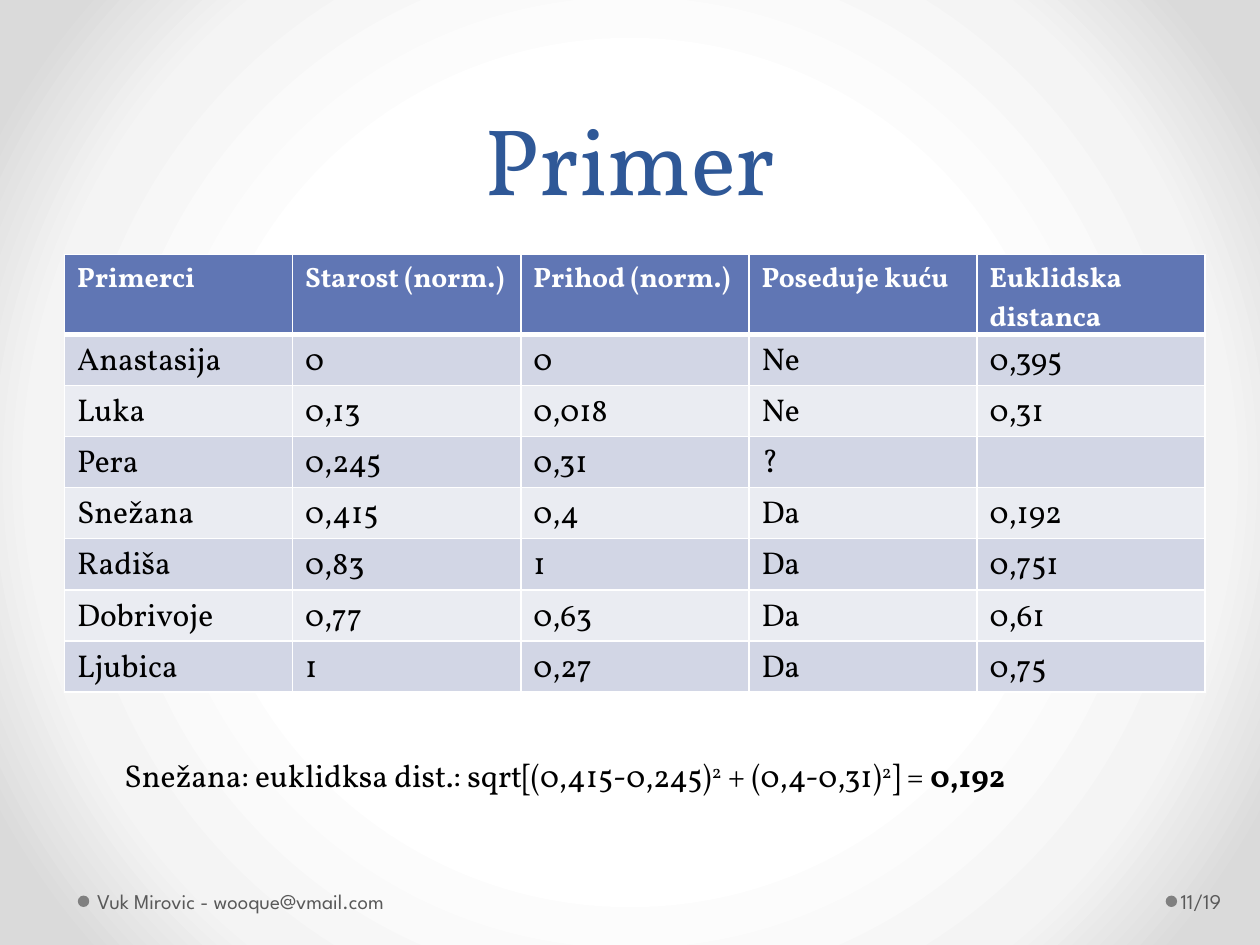
from typing import NamedTuple

from lxml import etree
from pptx import Presentation
from pptx.dml.color import RGBColor
from pptx.enum.shapes import MSO_SHAPE
from pptx.enum.text import MSO_ANCHOR, PP_ALIGN
from pptx.oxml.ns import qn
from pptx.util import Cm, Pt

OVAL = MSO_SHAPE.OVAL
TOP, MIDDLE, BOTTOM = MSO_ANCHOR.TOP, MSO_ANCHOR.MIDDLE, MSO_ANCHOR.BOTTOM
LEFT, CENTER = PP_ALIGN.LEFT, PP_ALIGN.CENTER

SERIF, SANS = "Vollkorn", "League Spartan"
WHITE, BLACK, GREY, DOT_GREY = "FFFFFF", "000000", "595959", "808080"
TITLE_BLUE, HEADER_BLUE = "2F5897", "6076B4"
BANDS = ("D2D6E5", "EAECF2")
BACKDROP = ((50, "FFFFFF"), (76, "F4F4F4"), (92, "DADADA"))

COLUMN_WIDTH, HEADER_HEIGHT, ROW_HEIGHT = 4.6, 1.59, 1.03
DOT_SIZE = 0.23

HEADINGS = ("Primerci", "Starost (norm.)", "Prihod (norm.)",
            "Poseduje kuću", "Euklidska distanca")
EXAMPLES = (
    ("Anastasija", "0", "0", "Ne", "0,395"),
    ("Luka", "0,13", "0,018", "Ne", "0,31"),
    ("Pera", "0,245", "0,31", "?", ""),
    ("Snežana", "0,415", "0,4", "Da", "0,192"),
    ("Radiša", "0,83", "1", "Da", "0,751"),
    ("Dobrivoje", "0,77", "0,63", "Da", "0,61"),
    ("Ljubica", "1", "0,27", "Da", "0,75"),
)


class Box(NamedTuple):
    left: float
    top: float
    width: float
    height: float


class Insets(NamedTuple):
    left: float = 0.25
    top: float = 0.13
    right: float = 0.25
    bottom: float = 0.13


class Piece(NamedTuple):
    text: str
    bold: bool = False
    raised: bool = False


class FooterItem(NamedTuple):
    text: str
    box: Box
    insets: Insets
    dot_left: float


FOOTER = (
    FooterItem("Vuk Mirovic - wooque@vmail.com", Box(1.83, 17.65, 7.9, 1.02),
               Insets(left=0.13), 1.57),
    FooterItem("11/19", Box(23.72, 17.65, 1.55, 1.02),
               Insets(left=0.08, right=0.13), 23.5),
)
CALCULATION = (
    Piece("Snežana: euklidksa dist.: sqrt[(0,415-0,245)"),
    Piece("2", raised=True),
    Piece(" + (0,4-0,31)"),
    Piece("2", raised=True),
    Piece("] = "),
    Piece("0,192", bold=True),
)


def rgb(value: str) -> RGBColor:
    return RGBColor.from_string(value)


def write(frame, pieces, *, size, color, font=SERIF, align=LEFT, leading=None):
    paragraph = frame.paragraphs[0]
    paragraph.alignment = align
    if leading:
        paragraph.line_spacing = Pt(leading)
    for piece in pieces:
        run = paragraph.add_run()
        run.text = piece.text
        run.font.name = font
        run.font.size = Pt(size)
        run.font.bold = piece.bold
        run.font.color.rgb = rgb(color)
        if piece.raised:
            run._r.get_or_add_rPr().set("baseline", "30000")


def add_text(slide, box: Box, pieces, *, anchor=TOP, insets=Insets(), **style):
    frame = slide.shapes.add_textbox(*map(Cm, box)).text_frame
    frame.word_wrap = True
    frame.vertical_anchor = anchor
    frame.margin_left, frame.margin_top, frame.margin_right, frame.margin_bottom = map(Cm, insets)
    write(frame, pieces, **style)


def add_color_xml(parent, value: str) -> None:
    etree.SubElement(parent, qn("a:srgbClr"), val=value)


def paint_backdrop(slide) -> None:
    slide.background.fill.gradient()
    gradient = slide.element.find(".//" + qn("a:gradFill"))
    gradient.clear()
    stops = etree.SubElement(gradient, qn("a:gsLst"))
    for position, value in BACKDROP:
        add_color_xml(etree.SubElement(stops, qn("a:gs"), pos=str(position * 1000)), value)
    circle = etree.SubElement(gradient, qn("a:path"), path="circle")
    etree.SubElement(circle, qn("a:fillToRect"), l="50000", t="50000", r="50000", b="50000")


def add_footer(slide, item: FooterItem) -> None:
    middle = item.box.top + item.box.height / 2
    dot_box = Box(item.dot_left, middle - DOT_SIZE / 2 + 0.01, DOT_SIZE, DOT_SIZE)
    dot = slide.shapes.add_shape(OVAL, *map(Cm, dot_box))
    dot.shadow.inherit = False
    dot.fill.solid()
    dot.fill.fore_color.rgb = rgb(DOT_GREY)
    dot.line.fill.background()
    add_text(slide, item.box, [Piece(item.text)], anchor=MIDDLE, insets=item.insets,
             size=12, color=GREY, font=SANS)


def fill_cell(cell, text: str, *, fill: str, bottom_width=1, bold=False, **style) -> None:
    properties = cell._tc.get_or_add_tcPr()
    for side, width in (("L", 1), ("R", 1), ("T", 1), ("B", bottom_width)):
        border = etree.SubElement(properties, qn(f"a:ln{side}"), w=str(Pt(width)))
        add_color_xml(etree.SubElement(border, qn("a:solidFill")), WHITE)
    cell.fill.solid()
    cell.fill.fore_color.rgb = rgb(fill)
    if text:
        write(cell.text_frame, [Piece(text, bold)], **style)


def add_examples(slide) -> None:
    box = Box(1.3, 5.13, COLUMN_WIDTH * len(HEADINGS),
              HEADER_HEIGHT + ROW_HEIGHT * len(EXAMPLES))
    table = slide.shapes.add_table(len(EXAMPLES) + 1, len(HEADINGS), *map(Cm, box)).table
    for column in table.columns:
        column.width = Cm(COLUMN_WIDTH)
    for index, row in enumerate(table.rows):
        row.height = Cm(ROW_HEIGHT if index else HEADER_HEIGHT)
    for column, heading in enumerate(HEADINGS):
        fill_cell(table.cell(0, column), heading, fill=HEADER_BLUE, bottom_width=3,
                  bold=True, size=16, color=WHITE)
    for index, example in enumerate(EXAMPLES):
        for column, value in enumerate(example):
            fill_cell(table.cell(index + 1, column), value, fill=BANDS[index % 2],
                      size=18, color=BLACK)


def main() -> None:
    deck = Presentation()
    deck.slide_width, deck.slide_height = Cm(25.4), Cm(19.05)
    slide = deck.slides.add_slide(deck.slide_layouts[6])
    paint_backdrop(slide)
    add_text(slide, Box(1.27, 0, 22.86, 4.45), [Piece("Primer")], anchor=BOTTOM,
             size=54, color=TITLE_BLUE, align=CENTER, leading=58)
    for item in FOOTER:
        add_footer(slide, item)
    add_text(slide, Box(2.26, 15.11, 18.82, 1.02), CALCULATION, size=18, color=BLACK)
    add_examples(slide)
    deck.save("out.pptx")


if __name__ == "__main__":
    main()
